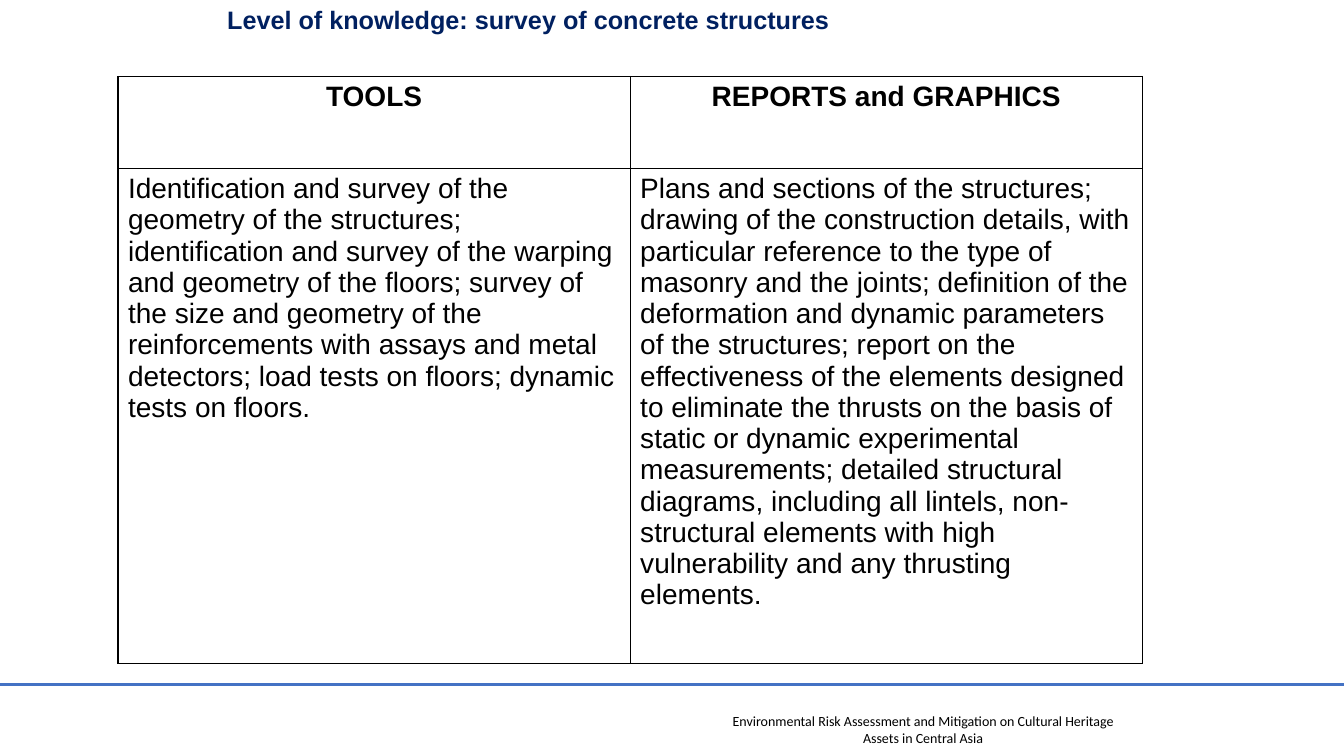
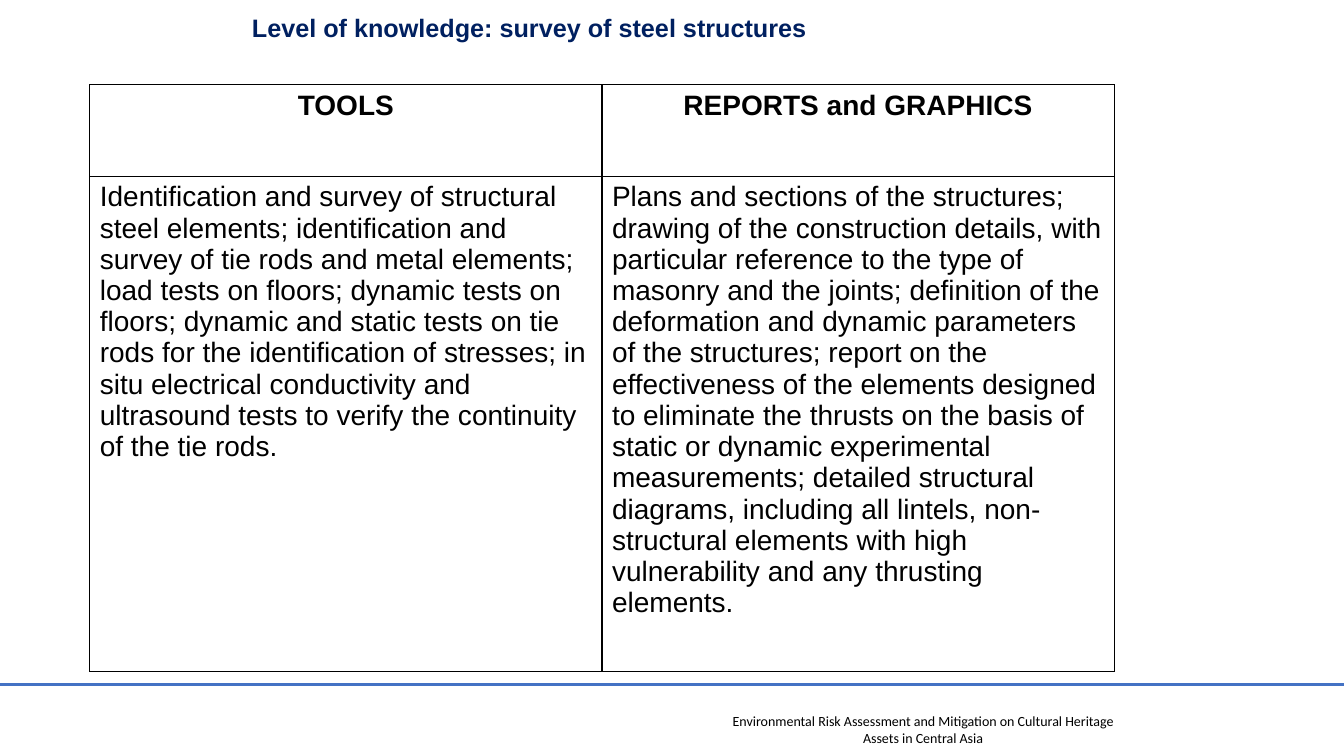
"""Build two slides on the survey of concrete and steel structures."""
from lxml import etree
from pptx import Presentation
from pptx.dml.color import RGBColor
from pptx.enum.shapes import MSO_CONNECTOR, MSO_SHAPE
from pptx.enum.text import MSO_ANCHOR, PP_ALIGN
from pptx.oxml.ns import qn
from pptx.util import Inches, Pt

CENTER, LEFT = PP_ALIGN.CENTER, PP_ALIGN.LEFT
TOP = MSO_ANCHOR.TOP
RECT, STRAIGHT = MSO_SHAPE.RECTANGLE, MSO_CONNECTOR.STRAIGHT

COLORS = {"white": "FFFFFF", "black": "000000", "navy": "002060", "rule": "4472C4"}
STYLES = {
    "title": {"name": "Arial", "size": Pt(18), "bold": True, "color": "navy"},
    "header": {"name": "Arial", "size": Pt(20), "bold": True, "color": "black"},
    "body": {"name": "Arial", "size": Pt(20), "bold": False, "color": "black"},
    "footer": {"name": "Calibri", "size": Pt(10), "bold": False, "color": "black"},
}

FOOTER = ("Environmental Risk Assessment and Mitigation on Cultural Heritage "
          "Assets in Central Asia")
HEADERS = ("TOOLS", "REPORTS and GRAPHICS")
REPORTS = (
    "Plans and sections of the structures; drawing of the construction details, "
    "with particular reference to the type of masonry and the joints; definition "
    "of the deformation and dynamic parameters of the structures; report on the "
    "effectiveness of the elements designed to eliminate the thrusts on the basis "
    "of static or dynamic experimental measurements; detailed structural diagrams, "
    "including all lintels, non-structural elements with high vulnerability and "
    "any thrusting elements."
)
SLIDES = [
    {
        "title": "Level of knowledge: survey of concrete structures",
        "title_at": (1.25, 0),
        "table_at": (1.17, 0.76),
        "tools": "Identification and survey of the geometry of the structures; "
                 "identification and survey of the warping and geometry of the "
                 "floors; survey of the size and geometry of the reinforcements "
                 "with assays and metal detectors; load tests on floors; dynamic "
                 "tests on floors.",
    },
    {
        "title": "Level of knowledge: survey of steel structures",
        "title_at": (1.26, 0.08),
        "table_at": (0.89, 0.84),
        "tools": "Identification and survey of structural steel elements; "
                 "identification and survey of tie rods and metal elements; load "
                 "tests on floors; dynamic tests on floors; dynamic and static "
                 "tests on tie rods for the identification of stresses; in situ "
                 "electrical conductivity and ultrasound tests to verify the "
                 "continuity of the tie rods.",
    },
]

SLIDE_W, SLIDE_H = 13.33, 7.5
TITLE_SIZE = (7.98, 0.65)
FOOTER_BOX = (7.02, 7.02, 4.27, 0.44)
RULE_Y = 6.79
COL_W = 5.08
ROW_HEIGHTS = (0.91, 4.91)


def rgb(name):
    return RGBColor.from_string(COLORS[name])


def inches(*values):
    return [Inches(v) for v in values]


def fill_solid(target, color):
    target.fill.solid()
    target.fill.fore_color.rgb = rgb(color)


def write(tf, text, style, align):
    tf.word_wrap = True
    p = tf.paragraphs[0]
    p.alignment = align
    r = p.add_run()
    r.text = text
    for key, value in STYLES[style].items():
        if key == "color":
            r.font.color.rgb = rgb(value)
        else:
            setattr(r.font, key, value)


def add_footer(s):
    box = s.shapes.add_textbox(*inches(*FOOTER_BOX))
    write(box.text_frame, FOOTER, "footer", CENTER)
    rule = s.shapes.add_connector(STRAIGHT, *inches(0, RULE_Y, SLIDE_W, RULE_Y))
    rule.line.color.rgb = rgb("rule")
    rule.line.width = Pt(2.25)
    etree.SubElement(rule._element.spPr, qn("a:effectLst"))


def add_title(s, text, at):
    sp = s.shapes.add_shape(RECT, *inches(*at, *TITLE_SIZE))
    sp.shadow.inherit = False
    fill_solid(sp, "white")
    sp.line.color.rgb = rgb("white")
    sp.line.width = Pt(1)
    tf = sp.text_frame
    tf.vertical_anchor = TOP
    tf.margin_top = Inches(0.04)
    write(tf, text, "title", CENTER)


def set_borders(cell):
    tc_pr = cell._tc.get_or_add_tcPr()
    for i, side in enumerate(("lnL", "lnR", "lnT", "lnB")):
        ln = etree.Element(qn(f"a:{side}"), w=str(Pt(1)))
        fill = etree.SubElement(ln, qn("a:solidFill"))
        etree.SubElement(fill, qn("a:srgbClr"), val=COLORS["black"])
        tc_pr.insert(i, ln)


def add_survey_table(s, tools, at):
    rows = (HEADERS, (tools, REPORTS))
    size = (COL_W * len(HEADERS), sum(ROW_HEIGHTS))
    table = s.shapes.add_table(len(rows), len(HEADERS), *inches(*at, *size)).table
    table.horz_banding = False
    for column in table.columns:
        column.width = Inches(COL_W)
    for i, texts in enumerate(rows):
        table.rows[i].height = Inches(ROW_HEIGHTS[i])
        style, align = (("header", CENTER), ("body", LEFT))[i]
        for j, text in enumerate(texts):
            cell = table.cell(i, j)
            fill_solid(cell, "white")
            set_borders(cell)
            write(cell.text_frame, text, style, align)


def main():
    prs = Presentation()
    prs.slide_width, prs.slide_height = inches(SLIDE_W, SLIDE_H)
    for content in SLIDES:
        s = prs.slides.add_slide(prs.slide_layouts[6])
        add_footer(s)
        add_survey_table(s, content["tools"], content["table_at"])
        add_title(s, content["title"], content["title_at"])
    prs.save("out.pptx")


if __name__ == "__main__":
    main()
